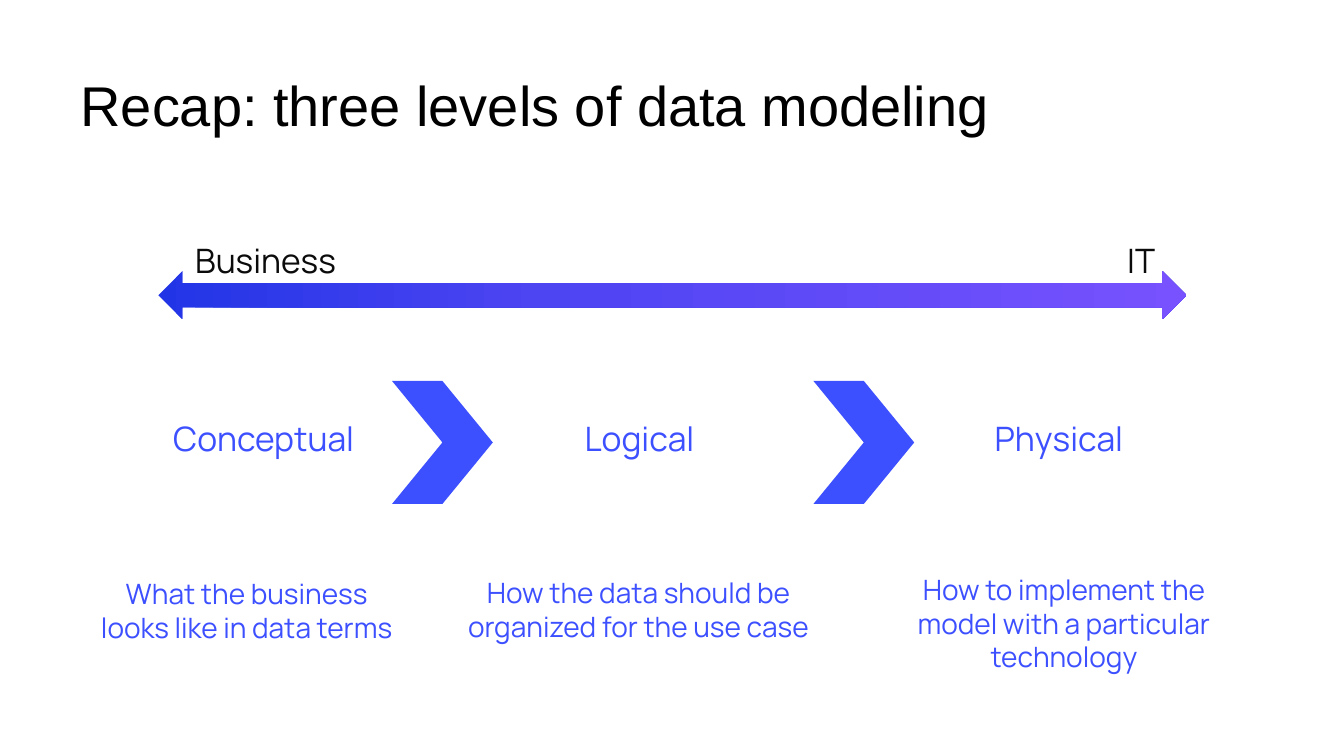
from copy import deepcopy
from pptx import Presentation
from pptx.dml.color import RGBColor
from pptx.enum.shapes import MSO_SHAPE
from pptx.enum.text import MSO_ANCHOR, MSO_AUTO_SIZE, PP_ALIGN
from pptx.util import Cm, Pt

BLACK = RGBColor(0x00, 0x00, 0x00)
INK = RGBColor(0x0B, 0x0B, 0x0B)
BLUE = RGBColor(0x3D, 0x50, 0xFF)
DEEP_BLUE = RGBColor(0x22, 0x35, 0xE6)
INDIGO = RGBColor(0x4D, 0x44, 0xF2)
VIOLET = RGBColor(0x77, 0x52, 0xFE)


def write(tf, text, align, size, color, name="Manrope"):
    p = tf.paragraphs[0]
    p.alignment = align
    r = p.add_run()
    r.text = text
    for key, value in {"name": name, "size": Pt(size), "bold": False}.items():
        setattr(r.font, key, value)
    r.font.color.rgb = color
    return p


def add_preset(kind, left, top, width, height):
    sp = s.shapes.add_shape(kind, Cm(left), Cm(top), Cm(width), Cm(height))
    sp.shadow.inherit = False
    sp.line.fill.background()
    return sp


prs = Presentation()
prs.slide_width, prs.slide_height = Cm(33.87), Cm(19.05)
s = prs.slides.add_slide(prs.slide_layouts[5])

title = s.shapes.title
title_box = {"left": 1.7, "top": 0.76, "width": 29.72, "height": 3.96}
for key, value in title_box.items():
    setattr(title, key, Cm(value))
tf = title.text_frame
title_format = {"word_wrap": True, "auto_size": MSO_AUTO_SIZE.NONE, "vertical_anchor": MSO_ANCHOR.MIDDLE}
for key, value in title_format.items():
    setattr(tf, key, value)
for side in ("left", "top", "right", "bottom"):
    setattr(tf, f"margin_{side}", Cm(0.33))
p = write(tf, "Recap: three levels of data modeling", PP_ALIGN.LEFT, 40, BLACK, "Arial")
p.line_spacing = 0.9

arrow = add_preset(MSO_SHAPE.LEFT_RIGHT_ARROW, 3.99, 6.83, 25.91, 1.22)
arrow.fill.gradient()
arrow.fill.gradient_angle = 0
first = arrow._element.spPr.xpath("./a:gradFill/a:gsLst/a:gs")[0]
first.addnext(deepcopy(first))
stops = [(0, DEEP_BLUE), (0.37, INDIGO), (1, VIOLET)]
for stop, (position, color) in zip(arrow.fill.gradient_stops, stops):
    stop.position = position
    stop.color.rgb = color

for left in (9.88, 20.5):
    chevron = add_preset(MSO_SHAPE.CHEVRON, left, 9.6, 2.54, 3.1)
    chevron.fill.solid()
    chevron.fill.fore_color.rgb = BLUE

labels = [
    ("Business", 4.67, 5.92, 4.6, 1.27, PP_ALIGN.LEFT, 24, INK),
    ("IT", 25.17, 5.92, 4.19, 1.27, PP_ALIGN.RIGHT, 24, INK),
]
levels = [
    ("Conceptual", 3.71, "What the business looks like in data terms", 2.13, 14.4, 8.18),
    ("Logical", 13.18, "How the data should be organized for the use case", 11.51, 14.38, 9.17),
    ("Physical", 23.75, "How to implement the model with a particular technology", 22.23, 14.3, 9.17),
]
for level, level_left, meaning, left, top, width in levels:
    labels.append((level, level_left, 10.41, 5.87, 1.27, PP_ALIGN.CENTER, 24, BLUE))
    labels.append((meaning, left, top, width, 2.82, PP_ALIGN.CENTER, 20, BLUE))

for text, left, top, width, height, align, size, color in labels:
    tf = s.shapes.add_textbox(Cm(left), Cm(top), Cm(width), Cm(height)).text_frame
    tf.word_wrap = True
    tf.auto_size = MSO_AUTO_SIZE.SHAPE_TO_FIT_TEXT
    write(tf, text, align, size, color)

prs.save("out.pptx")
